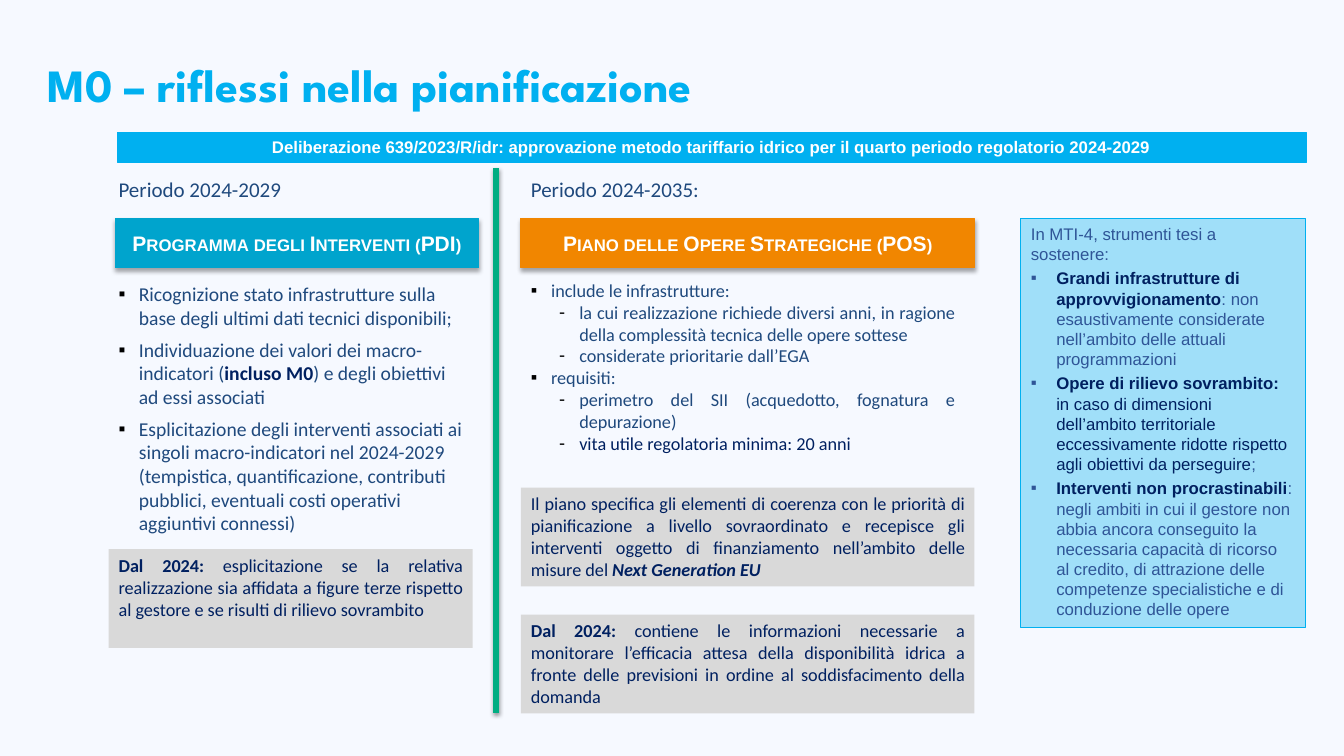
"""Build the slide on how M0 affects planning in the water service."""
from dataclasses import dataclass
from typing import Any, Optional

import lxml.etree
import pptx
import pptx.dml.color
import pptx.enum.shapes
import pptx.enum.text
import pptx.oxml
import pptx.oxml.ns
import pptx.util

Cm = pptx.util.Cm
Pt = pptx.util.Pt
ALIGN = pptx.enum.text.PP_ALIGN
ANCHOR = pptx.enum.text.MSO_ANCHOR

COLOURS: dict[str, str] = {
    "background": "F6F9FF", "sky": "00B0F0", "teal": "00A4CD", "orange": "F18600",
    "green": "00AD82", "grey": "D9D9D9", "navy": "002060", "blue": "1F497D",
    "indigo": "2F5597", "white": "FFFFFF", "black": "000000",
}
LEFT, MIDDLE = 2.74, 13.13
LEFT_WIDTH, MIDDLE_WIDTH = 9.17, 11.43
HEADER_TOP, HEADER_HEIGHT, NOTE_HEIGHT = 5.51, 1.24, 2.49


@dataclass
class Span:
    """A run of text."""
    text: str
    colour: Optional[str] = None
    bold: bool = False
    italic: bool = False


@dataclass
class Para:
    """A paragraph, with an optional bullet and hanging indent in centimetres."""
    spans: list[Span]
    bullet: str = ""
    indent: float = 0
    hanging: float = 0.51
    before: float = 0


@dataclass
class Panel:
    """A text box or a filled rectangle, measured in centimetres."""
    left: float
    top: float
    width: float
    height: float
    paras: list[Para]
    size: float
    colour: str
    font: str = "Calibri"
    align: Any = ALIGN.LEFT
    anchor: Any = ANCHOR.TOP
    fill: Optional[str] = None
    line: Optional[str] = None
    opacity: int = 100
    shadow: bool = False
    small_caps: bool = False
    bullet_colour: str = "black"


def rgb(name: str) -> pptx.dml.color.RGBColor:
    """Return a named colour."""
    return pptx.dml.color.RGBColor.from_string(COLOURS[name])


def add_effects(shape: Any, opacity: int = 0, distance: float = 1.8) -> None:
    """Give a shape a downward shadow, or none when opacity is zero."""
    shadow = (f'<a:outerShdw blurRad="{Pt(3.1)}" dist="{Pt(distance)}" dir="5400000" rotWithShape="0">'
              f'<a:srgbClr val="{COLOURS["black"]}"><a:alpha val="{opacity * 1000}"/></a:srgbClr>'
              '</a:outerShdw>') if opacity else ""
    shape._element.spPr.append(pptx.oxml.parse_xml(
        f'<a:effectLst {pptx.oxml.ns.nsdecls("a")}>{shadow}</a:effectLst>'))


def add_bullet(para: Any, item: Para, colour: str) -> None:
    """Add a coloured bullet and its hanging indent."""
    properties = para._p.get_or_add_pPr()
    properties.set("marL", str(Cm(item.indent)))
    properties.set("indent", str(-Cm(item.hanging)))
    qn = pptx.oxml.ns.qn
    holder = lxml.etree.SubElement(properties, qn("a:buClr"))
    lxml.etree.SubElement(holder, qn("a:srgbClr"), val=COLOURS[colour])
    lxml.etree.SubElement(properties, qn("a:buFont"), typeface="Arial")
    lxml.etree.SubElement(properties, qn("a:buChar"), char=item.bullet)


def write_text(frame: Any, panel: Panel) -> None:
    """Write the paragraphs of a panel run by run."""
    frame.word_wrap = True
    frame.vertical_anchor = panel.anchor
    for index, item in enumerate(panel.paras):
        para = frame.add_paragraph() if index else frame.paragraphs[0]
        if item.bullet:
            add_bullet(para, item, panel.bullet_colour)
        para.alignment = panel.align
        para.space_before = Pt(item.before if index else 0)
        for part in item.spans:
            span = para.add_run()
            span.text = part.text
            span.font.name = panel.font
            span.font.size = Pt(panel.size)
            span.font.bold = part.bold
            span.font.italic = part.italic
            span.font.color.rgb = rgb(part.colour or panel.colour)
            if panel.small_caps:
                span._r.get_or_add_rPr().set("cap", "small")


def draw_panel(page: Any, panel: Panel) -> None:
    """Draw a panel with its fill, outline, shadow and text."""
    place = [Cm(n) for n in (panel.left, panel.top, panel.width, panel.height)]
    if panel.fill is None:
        box = page.shapes.add_textbox(*place)
    else:
        box = page.shapes.add_shape(pptx.enum.shapes.MSO_SHAPE.RECTANGLE, *place)
        box.fill.solid()
        box.fill.fore_color.rgb = rgb(panel.fill)
        if panel.opacity < 100:
            colour = box._element.spPr.find(".//" + pptx.oxml.ns.qn("a:srgbClr"))
            lxml.etree.SubElement(colour, pptx.oxml.ns.qn("a:alpha"), val=str(panel.opacity * 1000))
        if panel.line:
            box.line.color.rgb = rgb(panel.line)
            box.line.width = Pt(0.75)
        else:
            box.line.fill.background()
        if panel.shadow:
            add_effects(box, 35)
        else:
            box.shadow.inherit = False
    write_text(box.text_frame, panel)


def period(left: float, text: str) -> Panel:
    """Describe the period label above a column."""
    return Panel(left, 4.32, 8.28, 0.89, [Para([Span(text)])], 15, "blue")


def header(left: float, width: float, text: str, fill: str) -> Panel:
    """Describe the coloured header of a column."""
    return Panel(left, HEADER_TOP, width, HEADER_HEIGHT, [Para([Span(text, bold=True)])], 15, "white",
                 "Arial", ALIGN.CENTER, ANCHOR.MIDDLE, fill, fill, shadow=True, small_caps=True)


def note(left: float, top: float, width: float, *spans: Span) -> Panel:
    """Describe a grey note."""
    return Panel(left, top, width, NOTE_HEIGHT, [Para(list(spans))], 13, "navy",
                 align=ALIGN.JUSTIFY, fill="grey")


def square(*spans: Span, before: float = 0, indent: float = 0.51) -> Para:
    """Describe a first-level bullet."""
    return Para(list(spans), "▪", indent, indent, before)


def dash(text: str, colour: Optional[str] = None) -> Para:
    """Describe a second-level bullet."""
    return Para([Span(text, colour)], "-", 1.22)


def aim(*spans: Span) -> Para:
    """Describe a bullet of the side panel."""
    return square(*spans, before=3, indent=0.64)


PANELS: list[Panel] = [
    Panel(LEFT, 6.99, LEFT_WIDTH, 6.68, [
        square(Span("Ricognizione stato infrastrutture sulla base degli ultimi dati tecnici disponibili;")),
        square(Span("Individuazione dei valori dei macro-indicatori ("), Span("incluso M0", "navy", True),
               Span(") e degli obiettivi ad essi associati"), before=6),
        square(Span("Esplicitazione degli interventi associati ai singoli macro-indicatori nel 2024-2029 "
                    "(tempistica, quantificazione, contributi pubblici, eventuali costi operativi "
                    "aggiuntivi connessi)"), before=6),
    ], 14, "blue"),
    Panel(MIDDLE, 6.91, 11.18, 4.7, [
        square(Span("include le infrastrutture:")),
        dash("la cui realizzazione richiede diversi anni, in ragione della complessità tecnica delle opere sottese"),
        dash("considerate prioritarie dall’EGA"),
        square(Span("requisiti:")),
        dash("perimetro del SII (acquedotto, fognatura e depurazione)"),
        dash("vita utile regolatoria minima: 20 anni", "navy"),
    ], 13, "blue", align=ALIGN.JUSTIFY),
    note(MIDDLE, 12.29, MIDDLE_WIDTH,
         Span("Il piano specifica gli elementi di coerenza con le priorità di pianificazione a livello "
              "sovraordinato e recepisce gli interventi oggetto di finanziamento nell’ambito delle misure del "),
         Span("Next Generation EU", bold=True, italic=True)),
    period(LEFT, "Periodo 2024-2029"),
    period(MIDDLE, "Periodo 2024-2035:"),
    note(MIDDLE, 15.49, MIDDLE_WIDTH, Span("Dal 2024:", bold=True),
         Span(" contiene le informazioni necessarie a monitorare l’efficacia attesa della disponibilità "
              "idrica a fronte delle previsioni in ordine al soddisfacimento della domanda")),
    header(2.9, LEFT_WIDTH, "Programma degli Interventi (PDI)", "teal"),
    header(MIDDLE, MIDDLE_WIDTH, "Piano delle Opere Strategiche (POS)", "orange"),
    note(LEFT, 13.84, LEFT_WIDTH, Span("Dal 2024: ", bold=True),
         Span("esplicitazione se la relativa realizzazione sia affidata a figure terze rispetto al gestore "
              "e se risulti di rilievo sovrambito")),
    Panel(25.73, HEADER_TOP, 7.16, 10.31, [
        Para([Span("In MTI-4, strumenti tesi a sostenere:")]),
        aim(Span("Grandi infrastrutture di approvvigionamento", "navy", True),
            Span(": non esaustivamente considerate nell’ambito delle attuali programmazioni")),
        aim(Span("Opere di rilievo sovrambito: ", "navy", True),
            Span("in caso di dimensioni dell’ambito territoriale eccessivamente ridotte rispetto agli "
                 "obiettivi da perseguire", "navy"), Span(";")),
        aim(Span("Interventi non procrastinabili", "navy", True),
            Span(": negli ambiti in cui il gestore non abbia ancora conseguito la necessaria capacità di "
                 "ricorso al credito, di attrazione delle competenze specialistiche e di conduzione delle opere")),
    ], 12, "indigo", "Arial", fill="sky", line="sky", opacity=35, bullet_colour="indigo"),
    Panel(2.95, 3.33, 29.97, 0.76, [Para([Span(
        "Deliberazione 639/2023/R/idr: approvazione metodo tariffario idrico per il quarto periodo "
        "regolatorio 2024-2029", bold=True)])], 12, "white", "Arial", ALIGN.CENTER, fill="sky", line="sky"),
]
TITLE = Panel(0.94, 0.36, 29.21, 3.68, [Para([Span("M0 – riflessi nella pianificazione", bold=True)])],
              33, "sky", "League Spartan", anchor=ANCHOR.MIDDLE)


def draw_title(page: Any) -> None:
    """Place and format the title placeholder."""
    title = page.shapes.title
    title.left, title.top = Cm(TITLE.left), Cm(TITLE.top)
    title.width, title.height = Cm(TITLE.width), Cm(TITLE.height)
    write_text(title.text_frame, TITLE)
    title.text_frame.auto_size = pptx.enum.text.MSO_AUTO_SIZE.NONE
    title.text_frame.paragraphs[0].line_spacing = 0.9


def draw_divider(page: Any) -> None:
    """Draw the vertical line between the two programmes."""
    divider = page.shapes.add_connector(pptx.enum.shapes.MSO_CONNECTOR.STRAIGHT,
                                        Cm(12.5), Cm(4.24), Cm(12.5), Cm(17.96))
    divider.line.color.rgb = rgb("green")
    divider.line.width = Pt(4.5)
    add_effects(divider, 38, 1.6)


def main() -> None:
    """Build and save the deck."""
    deck = pptx.Presentation()
    deck.slide_width, deck.slide_height = Cm(33.87), Cm(19.05)
    page = deck.slides.add_slide(deck.slide_layouts[5])
    page.background.fill.solid()
    page.background.fill.fore_color.rgb = rgb("background")
    draw_title(page)
    draw_divider(page)
    for panel in PANELS:
        draw_panel(page, panel)
    deck.save("out.pptx")


if __name__ == "__main__":
    main()
